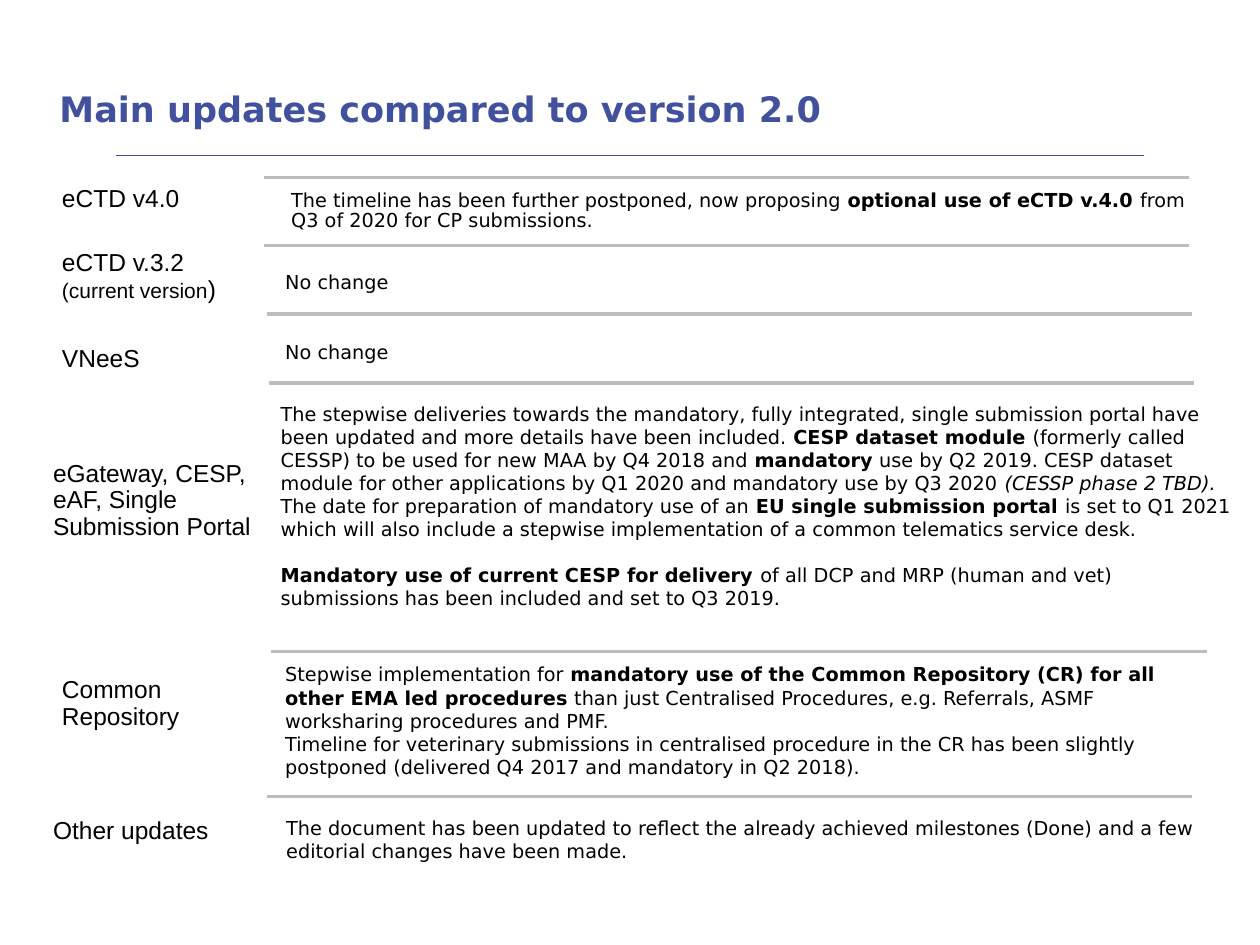
import pptx
import pptx.dml.color
import pptx.enum.shapes
import pptx.enum.text
import pptx.oxml.ns
import pptx.util
from dataclasses import dataclass
from lxml import etree

Cm = pptx.util.Cm
Pt = pptx.util.Pt


@dataclass(frozen=True)
class Theme:
    title_color: str = "42519E"
    text_color: str = "000000"
    rule_color: str = "BDBDBD"
    label_font: str = "Arial"
    body_font: str = "DejaVu Sans"
    title_size: int = 20
    label_size: int = 14
    note_size: int = 12
    body_size: int = 11
    title_rule_width: float = 0.75
    row_rule_width: float = 2
    paragraph_gap: int = 13
    tight_spacing: float = 0.9


THEME = Theme()
TIGHT = (0.18, 0.18)
NORMAL = (0.25, 0.13)
BREAK = ("\n", "")

TITLE = "Main updates compared to version 2.0"
TITLE_BOX = (1.2, 0.91, 16.61, 1.7)
TITLE_RULE = (2.34, 3.13, 20.72)

ROWS = [
    {
        "rule": (5.32, 3.58, 18.64),
        "label": [[("eCTD v4.0", "")]],
        "label_box": (1.07, 3.58, 4.65, 2.64),
        "detail": [[
            ("The timeline has been further postponed, now proposing ", ""),
            ("optional use of eCTD v.4.0 ", "b"),
            ("from Q3 of 2020 for CP submissions.", ""),
        ]],
        "detail_box": (5.69, 3.66, 18.64, 2.74),
        "tight": True,
    },
    {
        "rule": (5.32, 4.95, 18.64),
        "label": [[("eCTD v.3.2 ", ""), BREAK, ("(current version", "s"), (")", "")]],
        "label_box": (1.07, 4.87, 4.65, 2.64),
        "detail": [[("No change", "")]],
        "detail_box": (5.5, 5.32, 19.84, 0.74),
    },
    {
        "rule": (5.38, 6.33, 18.64),
        "label": [[("VNeeS", "")]],
        "label_box": (1.07, 6.81, 4.65, 1.32),
        "detail": [[("No change", "")]],
        "detail_box": (5.5, 6.73, 18.92, 0.74),
    },
    {
        "rule": (5.42, 7.72, 18.64),
        "label": [[("eGateway, CESP, eAF, Single Submission Portal", "")]],
        "label_box": (0.89, 9.12, 4.65, 2.64),
        "detail": [
            [
                ("The stepwise deliveries towards the mandatory, fully integrated, single "
                 "submission portal have been updated and more details have been included. ", ""),
                ("CESP dataset module ", "b"),
                ("(formerly called CESSP) to be used for new MAA by Q4 2018 and ", ""),
                ("mandatory", "b"),
                (" use by Q2 2019. CESP dataset module for other applications by Q1 2020 "
                 "and mandatory use by Q3 2020 ", ""),
                ("(CESSP phase 2 TBD).", "i"),
            ],
            [
                ("The date for preparation of mandatory use of an ", ""),
                ("EU single submission portal ", "b"),
                ("is set to Q1 2021 which will also include a stepwise implementation "
                 "of a common telematics service desk.", ""),
            ],
            [
                ("Mandatory use of current CESP for delivery ", "b"),
                ("of all DCP and MRP (human and vet) submissions has been included "
                 "and set to Q3 2019.", ""),
            ],
        ],
        "detail_box": (5.41, 7.97, 19.69, 4.5),
        "gap_before": 2,
    },
    {
        "rule": (5.46, 13.13, 18.87),
        "label": [[("Common Repository", "")]],
        "label_box": (1.07, 13.48, 3.63, 2.64),
        "detail": [
            [
                ("Stepwise implementation for ", ""),
                ("mandatory use of the Common Repository (CR) for all other EMA led "
                 "procedures", "b"),
                (" than just Centralised Procedures, e.g. Referrals, ASMF worksharing "
                 "procedures and PMF.", ""),
            ],
            [("Timeline for veterinary submissions in centralised procedure in the CR has been "
              "slightly postponed (delivered Q4 2017 and mandatory in Q2 2018).", "")],
        ],
        "detail_box": (5.5, 13.23, 18.42, 2.69),
    },
    {
        "rule": (5.38, 16.06, 18.64),
        "label": [[("Other updates", "")]],
        "label_box": (0.89, 16.32, 4.65, 1.83),
        "detail": [[("The document has been updated to reflect the already achieved milestones "
                     "(Done) and a few editorial changes have been made.", "")]],
        "detail_box": (5.52, 16.33, 19.02, 1.19),
    },
]


def rgb(color):
    return pptx.dml.color.RGBColor.from_string(color)


def add_rule(slide, place, color, width):
    left, top, length = place
    rule = slide.shapes.add_connector(
        pptx.enum.shapes.MSO_CONNECTOR.STRAIGHT,
        Cm(left), Cm(top), Cm(left + length), Cm(top))
    rule.line.color.rgb = rgb(color)
    rule.line.width = Pt(width)
    etree.SubElement(rule.element.spPr, pptx.oxml.ns.qn("a:effectLst"))


def add_panel(slide, box):
    left, top, width, height = map(Cm, box)
    right, bottom = left + width, top + height
    outline = slide.shapes.build_freeform(left, top)
    outline.add_line_segments([(right, top), (right, bottom), (left, bottom)], close=True)
    panel = outline.convert_to_shape()
    panel.shadow.inherit = False
    panel.fill.background()
    panel.line.fill.background()
    return panel


def add_text(slide, box, paragraphs, font, size, color=THEME.text_color,
             insets=NORMAL, gap_before=None):
    tight = insets == TIGHT
    holder = add_panel(slide, box) if tight else slide.shapes.add_textbox(*map(Cm, box))
    frame = holder.text_frame
    frame.word_wrap = True
    frame.vertical_anchor = pptx.enum.text.MSO_ANCHOR.TOP
    frame.margin_left = frame.margin_right = Cm(insets[0])
    frame.margin_top = frame.margin_bottom = Cm(insets[1])
    for index, pieces in enumerate(paragraphs):
        paragraph = frame.paragraphs[0] if index == 0 else frame.add_paragraph()
        paragraph.alignment = pptx.enum.text.PP_ALIGN.LEFT
        if tight:
            paragraph.line_spacing = THEME.tight_spacing
        if index and index == gap_before:
            paragraph.space_before = Pt(THEME.paragraph_gap)
        for piece in pieces:
            if piece == BREAK:
                paragraph.add_line_break()
                continue
            words, style = piece
            run = paragraph.add_run()
            run.text = words
            run.font.name = font
            run.font.size = Pt(THEME.note_size if style == "s" else size)
            run.font.bold = style == "b"
            run.font.italic = style == "i"
            run.font.color.rgb = rgb(color)
    return frame


def main():
    deck = pptx.Presentation()
    deck.slide_width, deck.slide_height = Cm(25.4), Cm(19.05)
    slide = deck.slides.add_slide(deck.slide_layouts[6])

    add_rule(slide, TITLE_RULE, THEME.title_color, THEME.title_rule_width)
    heading = add_text(slide, TITLE_BOX, [[(TITLE, "b")]], THEME.body_font,
                       THEME.title_size, THEME.title_color, insets=(0, 0))
    heading.vertical_anchor = pptx.enum.text.MSO_ANCHOR.BOTTOM

    for row in ROWS:
        add_rule(slide, row["rule"], THEME.rule_color, THEME.row_rule_width)
        add_text(slide, row["label_box"], row["label"], THEME.label_font,
                 THEME.label_size, insets=TIGHT)
        add_text(slide, row["detail_box"], row["detail"], THEME.body_font, THEME.body_size,
                 insets=TIGHT if row.get("tight") else NORMAL,
                 gap_before=row.get("gap_before"))

    deck.save("out.pptx")


if __name__ == "__main__":
    main()
